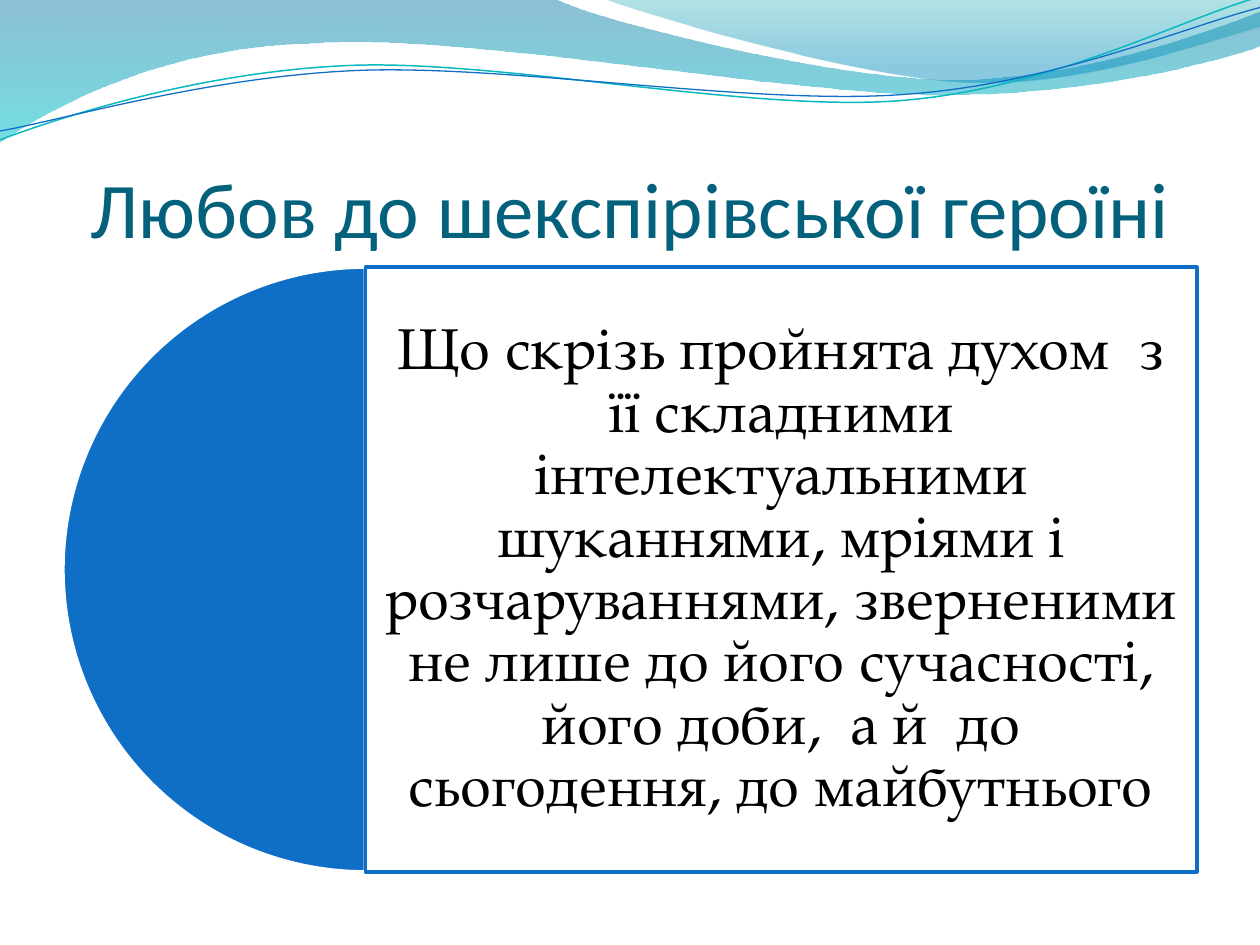
from math import cos, radians, sin

from lxml import etree
from pptx import Presentation
from pptx.dml.color import RGBColor
from pptx.enum.shapes import MSO_SHAPE
from pptx.enum.text import MSO_ANCHOR, MSO_AUTO_SIZE, PP_ALIGN
from pptx.oxml.ns import qn
from pptx.util import Inches, Pt

PIE, RECTANGLE = MSO_SHAPE.PIE, MSO_SHAPE.RECTANGLE
CENTER = PP_ALIGN.CENTER
MIDDLE, BOTTOM = MSO_ANCHOR.MIDDLE, MSO_ANCHOR.BOTTOM
NO_AUTOFIT = MSO_AUTO_SIZE.NONE
TITLE_ONLY = 5

TITLE = "Любов до шекспірівської героїні"
BODY = ("Що скрізь пройнята духом  з її складними інтелектуальними шуканнями, "
        "мріями і розчаруваннями, зверненими не лише до його сучасності, "
        "його доби,  а й  до сьогодення, до майбутнього")

THEME = {
    "blue": "0F6FC6", "white": "FFFFFF", "outline": 2,
    "title": {"name": "Calibri", "size": 45, "color": "04617B"},
    "body": {"name": "TeX Gyre Pagella", "size": 33, "color": "000000"},
}

# Each segment holds one point (a line) or three (two Bezier controls, then the end).
# Gradient stops are (position, colour, opacity percent).
BANDS = [
    {"segments": [[(0, 0)], [(4.4, -0.01)],
                  [(4.76, 0.17), (6.64, 0.63), (7.58, 0.63)],
                  [(8.53, 0.63), (9.58, 0.26), (10, 0.09)], [(10.01, 0.36)],
                  [(9.83, 0.44), (8.7, 0.76), (7.46, 0.75)],
                  [(6.22, 0.75), (3.82, 0.28), (2.57, 0.34)],
                  [(1.29, 0.36), (0.46, 0.83), (-0.01, 1.13)], [(0, 0)]],
     "stops": [(0, "0074A1", 45), (1, "00C6CF", 55)]},
    {"segments": [[(4.79, -0.01)],
                  [(5.09, 0.11), (6.82, 0.62), (7.69, 0.65)],
                  [(8.56, 0.69), (9.61, 0.32), (10, 0.21)],
                  [(10, 0)], [(4.79, -0.01)]],
     "stops": [(0, "00A1A9", 30), (0.8, "008BBF", 45)]},
]
WAVES = [
    {"segments": [[(0, 1.11)],
                  [(0.48, 0.93), (1.58, 0.57), (2.77, 0.52)],
                  [(3.95, 0.47), (5.93, 0.89), (7.13, 0.8)],
                  [(8.33, 0.71), (9.38, 0.15), (9.98, -0.02)]],
     "center": (4.99, 0.57), "color": "0AB8BF", "width": 0.85},
    {"segments": [[(0, 1.04)],
                  [(0.47, 0.96), (1.64, 0.61), (2.83, 0.56)],
                  [(4.03, 0.51), (5.97, 0.84), (7.17, 0.75)],
                  [(8.36, 0.67), (9.41, 0.21), (10, 0.06)]],
     "center": (5, 0.59), "color": "0F6FC6", "width": 0.75},
]
WAVE_TILT = 2.7

MARGIN, PANEL_TOP, PANEL_HEIGHT, SLIDE_WIDTH = 0.5, 2.12, 4.8, 10
PANEL_LEFT = MARGIN + PANEL_HEIGHT / 2
PANEL_WIDTH = SLIDE_WIDTH - MARGIN - PANEL_LEFT


def rgb(color):
    return RGBColor.from_string(color)


def set_opacity(parent, percent):
    for color in parent.iter(qn("a:srgbClr")):
        etree.SubElement(color, qn("a:alpha"), val=str(percent * 1000))


def set_line(shape, color, width):
    shape.line.color.rgb = rgb(color)
    shape.line.width = Pt(width)


def rotate(point, center, degrees):
    cosine, sine = cos(radians(degrees)), sin(radians(degrees))
    x, y = point[0] - center[0], point[1] - center[1]
    return center[0] + x * cosine - y * sine, center[1] + x * sine + y * cosine


def add_outline(slide, segments, close):
    """Build a freeform through the segment ends, then bend its curved segments."""
    segments = [[(Inches(x), Inches(y)) for x, y in segment] for segment in segments]
    start, *ends = [segment[-1] for segment in segments]
    builder = slide.shapes.build_freeform(*start)
    builder.add_line_segments(ends, close=close)
    shape = builder.convert_to_shape()
    shape.shadow.inherit = False
    lines = list(shape.element.iter(qn("a:lnTo")))
    for line, segment in zip(lines, segments[1:]):
        if len(segment) == 3:
            curve = etree.Element(qn("a:cubicBezTo"))
            for x, y in segment:
                etree.SubElement(curve, qn("a:pt"), x=str(x - shape.left), y=str(y - shape.top))
            line.getparent().replace(line, curve)
    return shape


def add_band(slide, band):
    shape = add_outline(slide, band["segments"], True)
    shape.line.fill.background()
    shape.fill.gradient()
    shape.fill.gradient_angle = 270
    stop_elements = shape.element.iter(qn("a:gs"))
    for stop, element, (position, color, opacity) in zip(
            shape.fill.gradient_stops, stop_elements, band["stops"]):
        stop.position = position
        stop.color.rgb = rgb(color)
        set_opacity(element, opacity)


def add_wave(slide, wave):
    segments = [[rotate(point, wave["center"], WAVE_TILT) for point in segment]
                for segment in wave["segments"]]
    shape = add_outline(slide, segments, False)
    shape.rotation = 360 - WAVE_TILT
    shape.fill.background()
    set_line(shape, wave["color"], wave["width"])


def add_panel(slide, kind, left, width, fill, line):
    shape = slide.shapes.add_shape(kind, *map(Inches, (left, PANEL_TOP, width, PANEL_HEIGHT)))
    shape.shadow.inherit = False
    shape.fill.solid()
    shape.fill.fore_color.rgb = rgb(fill)
    return shape, set_line(shape, line, THEME["outline"])


def write(shape, text, style, anchor, insets, line_spacing):
    frame = shape.text_frame
    frame.text = text
    frame_format = {"word_wrap": True, "auto_size": NO_AUTOFIT, "vertical_anchor": anchor}
    sides = ("margin_left", "margin_top", "margin_right", "margin_bottom")
    frame_format.update(zip(sides, map(Inches, insets)))
    for name, value in frame_format.items():
        setattr(frame, name, value)
    paragraph = frame.paragraphs[0]
    paragraph.alignment = CENTER
    paragraph.line_spacing = line_spacing
    font = paragraph.runs[0].font
    font.name, font.size = style["name"], Pt(style["size"])
    font.color.rgb = rgb(style["color"])


def main():
    presentation = Presentation()
    presentation.slide_width, presentation.slide_height = Inches(SLIDE_WIDTH), Inches(7.5)
    slide = presentation.slides.add_slide(presentation.slide_layouts[TITLE_ONLY])

    for band in BANDS:
        add_band(slide, band)
    for wave in WAVES:
        add_wave(slide, wave)

    title = slide.shapes.title
    title_box = {"left": MARGIN, "top": 0.77, "width": 9, "height": 1.25}
    for name, value in title_box.items():
        setattr(title, name, Inches(value))
    write(title, TITLE, THEME["title"], BOTTOM, (0, 0.05, 0, 0), 1.0)

    half_disc, _ = add_panel(slide, PIE, MARGIN, PANEL_HEIGHT, THEME["blue"], THEME["white"])
    half_disc.adjustments[0], half_disc.adjustments[1] = 54, 162
    panel, _ = add_panel(slide, RECTANGLE, PANEL_LEFT, PANEL_WIDTH, THEME["white"], THEME["blue"])
    set_opacity(panel.element.spPr.find(qn("a:solidFill")), 90)
    write(panel, BODY, THEME["body"], MIDDLE, (0.14,) * 4, 0.9)

    presentation.save("out.pptx")


if __name__ == "__main__":
    main()
